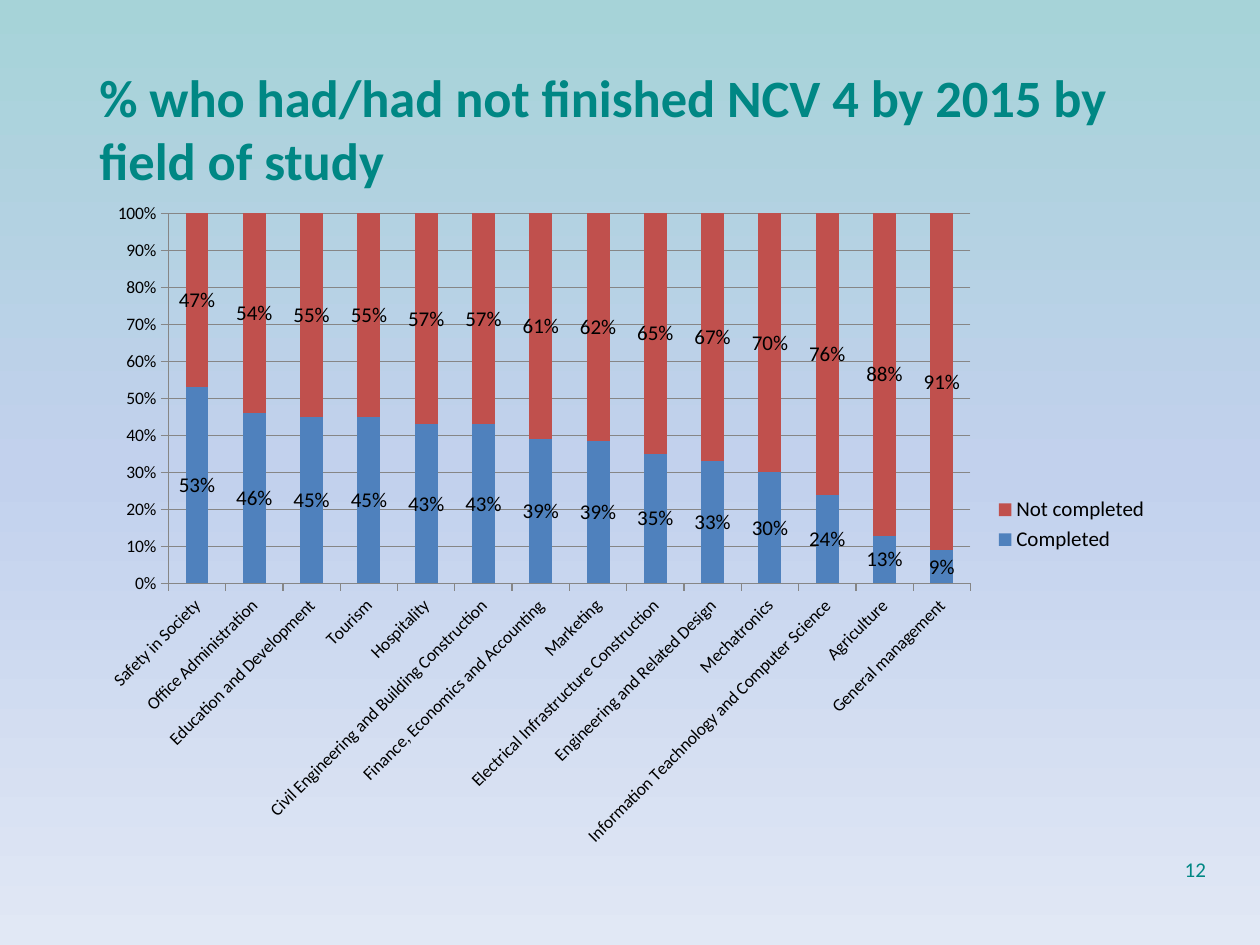
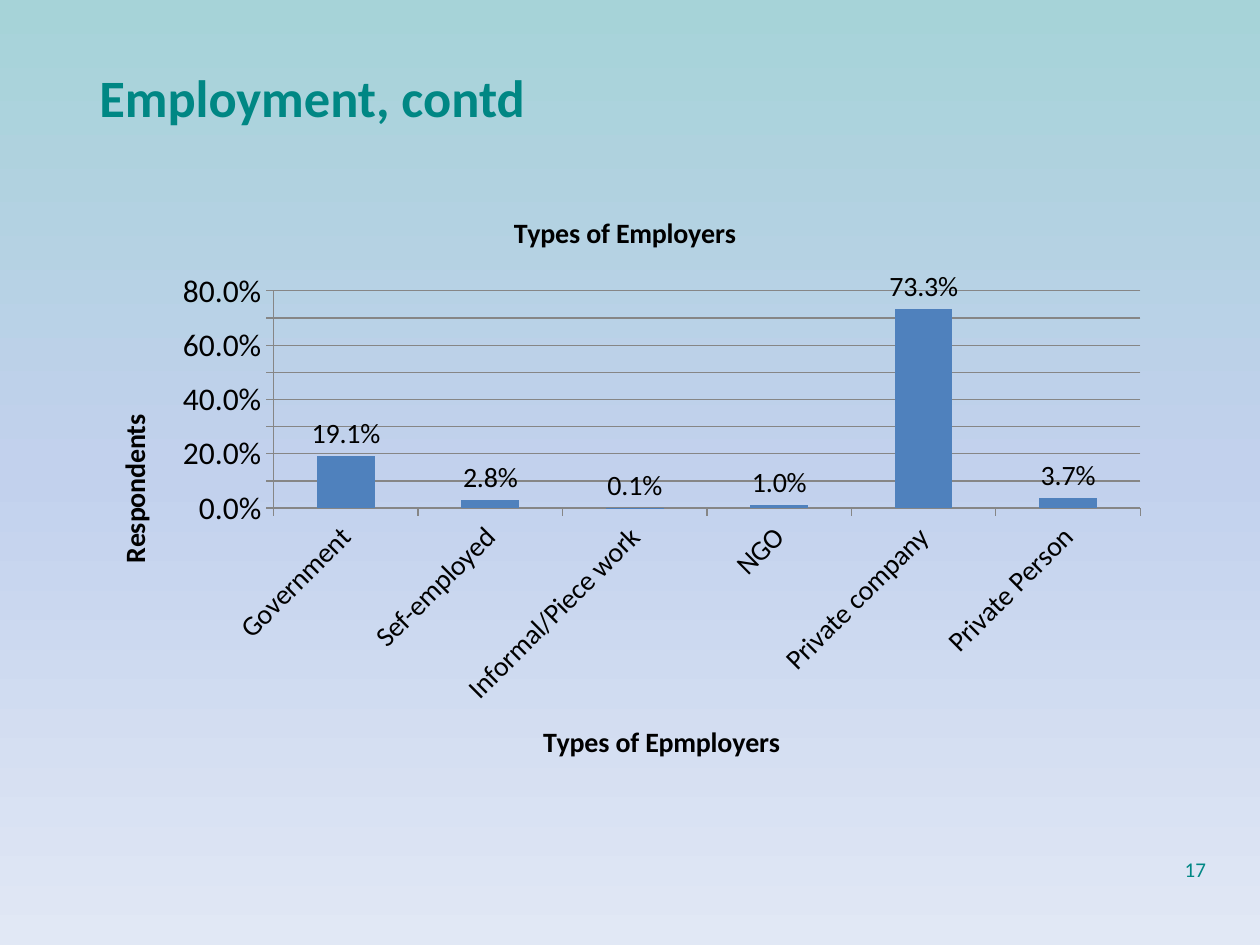
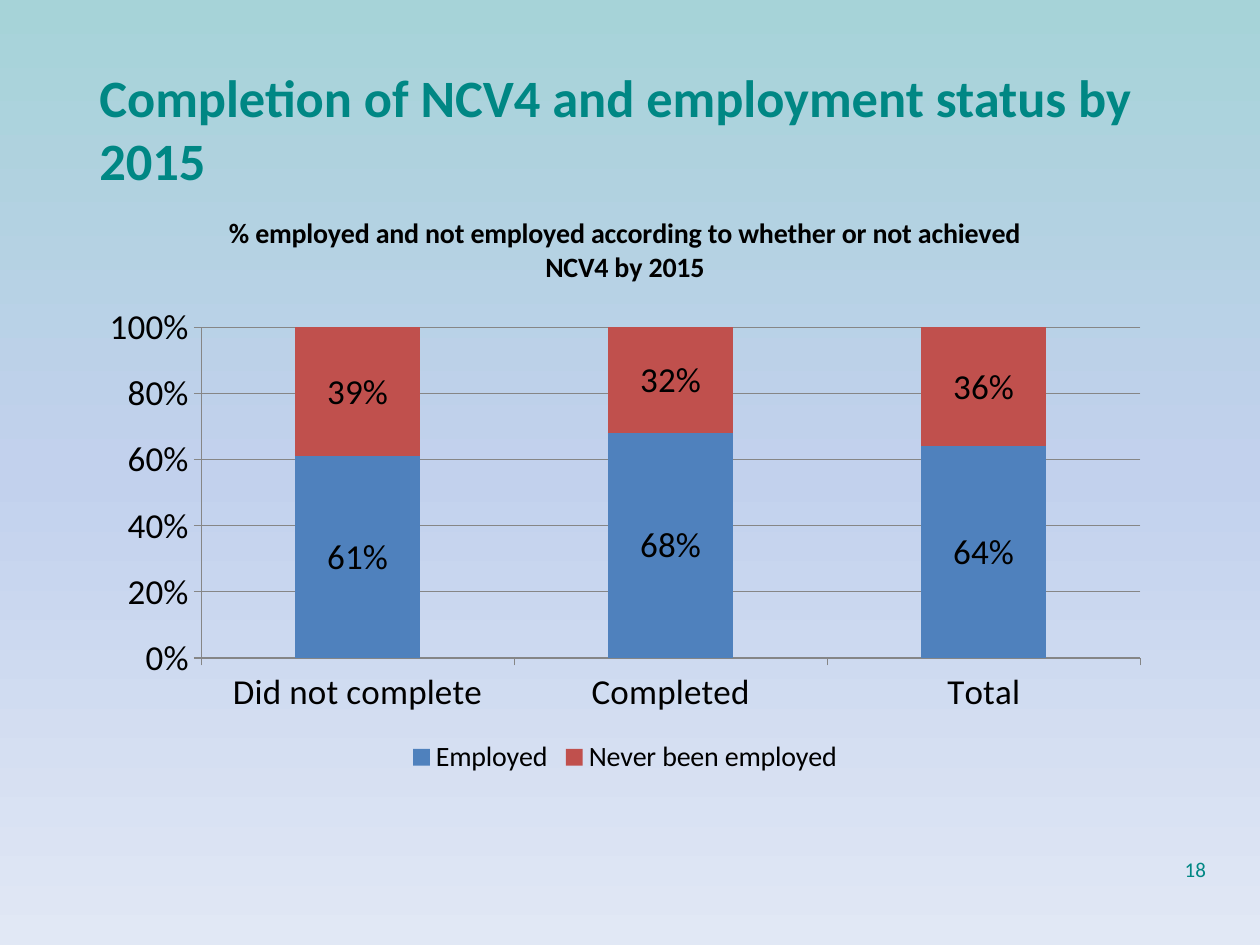
"""Builds three slides of college completion and employment charts."""
from dataclasses import dataclass

from lxml.etree import SubElement
from pptx import Presentation
from pptx.chart.axis import _BaseAxis as Axis
from pptx.chart.chart import Chart
from pptx.chart.data import CategoryChartData
from pptx.dml.color import RGBColor
from pptx.enum.chart import XL_CHART_TYPE as ChartKind
from pptx.enum.chart import XL_LABEL_POSITION as LabelSpot
from pptx.enum.chart import XL_LEGEND_POSITION as LegendSpot
from pptx.enum.chart import XL_TICK_MARK as Tick
from pptx.enum.text import MSO_ANCHOR as Anchor
from pptx.enum.text import MSO_AUTO_SIZE as AutoSize
from pptx.enum.text import PP_ALIGN as Align
from pptx.oxml.ns import qn
from pptx.slide import Slide
from pptx.text.text import Font
from pptx.util import Inches, Pt

COLORS = {
    "sky_top": "A6D3D8",
    "sky_middle": "C2D1ED",
    "sky_bottom": "E1E8F5",
    "teal": "008784",
    "text": "000000",
    "rule": "868686",
    "first_series": "4F81BD",
    "second_series": "C0504D",
}
SERIES_COLORS = ("first_series", "second_series")
BACKGROUND_STOPS = ((0, "sky_top"), (50, "sky_middle"), (100, "sky_bottom"))
FONT = "Calibri"
COLUMNS, ROWS = 100, 75
WIDTH, HEIGHT = Inches(10), Inches(7.5)


@dataclass(frozen=True)
class Area:
    """A rectangle in grid columns and rows."""
    column: float
    row: float
    columns: float
    rows: float

    def place(self) -> tuple[int, int, int, int]:
        """Return left, top, width and height as slide lengths."""
        return (round(self.column * WIDTH / COLUMNS), round(self.row * HEIGHT / ROWS),
                round(self.columns * WIDTH / COLUMNS), round(self.rows * HEIGHT / ROWS))


@dataclass(frozen=True)
class ChartSlide:
    """The content and chart settings of one slide."""
    heading: str
    heading_rows: float
    number: int
    chart_rows: float
    kind: ChartKind
    categories: tuple[str, ...]
    series: dict[str, tuple[float, ...]]
    category_size: int
    value_size: int
    label_size: int
    major_unit: float
    number_format: str = "0%"
    label_spot: LabelSpot = LabelSpot.CENTER
    label_turn: int = 0
    chart_title: str = ""
    category_title: str = ""
    value_title: str = ""
    legend: LegendSpot | None = None
    legend_size: int = 12


SLIDES = (
    ChartSlide(
        heading="% who had/had not finished NCV 4 by 2015 by field of study",
        heading_rows=11.1, number=12, chart_rows=53.1,
        kind=ChartKind.COLUMN_STACKED_100,
        categories=(
            "Safety in Society", "Office Administration", "Education and Development",
            "Tourism", "Hospitality", "Civil Engineering and Building Construction",
            "Finance, Economics and Accounting", "Marketing",
            "Electrical Infrastructure Construction", "Engineering and Related Design",
            "Mechatronics", "Information Teachnology and Computer Science",
            "Agriculture", "General management"),
        series={
            "Completed": (0.53, 0.46, 0.45, 0.45, 0.43, 0.43, 0.39,
                          0.39, 0.35, 0.33, 0.3, 0.24, 0.13, 0.09),
            "Not completed": (0.47, 0.54, 0.55, 0.55, 0.57, 0.57, 0.61,
                              0.62, 0.65, 0.67, 0.7, 0.76, 0.88, 0.91)},
        category_size=10, value_size=10, label_size=12, major_unit=0.1,
        label_turn=-45, legend=LegendSpot.RIGHT),
    ChartSlide(
        heading="Employment, contd",
        heading_rows=6.1, number=17, chart_rows=47.6,
        kind=ChartKind.COLUMN_CLUSTERED,
        categories=("Government", "Sef-employed", "Informal/Piece work", "NGO",
                    "Private company", "Private Person"),
        series={"Series 1": (0.191, 0.028, 0.001, 0.01, 0.733, 0.037)},
        category_size=16, value_size=18, label_size=16, major_unit=0.1,
        number_format="0.0%", label_spot=LabelSpot.OUTSIDE_END, label_turn=-45,
        chart_title="Types of Employers", category_title="Types of Epmployers",
        value_title="Respondents"),
    ChartSlide(
        heading="Completion of NCV4 and employment status by 2015",
        heading_rows=11.1, number=18, chart_rows=46.8,
        kind=ChartKind.COLUMN_STACKED_100,
        categories=("Did not complete", "Completed", "Total"),
        series={"Employed": (0.61, 0.68, 0.64),
                "Never been employed": (0.39, 0.32, 0.36)},
        category_size=20, value_size=20, label_size=20, major_unit=0.2,
        chart_title="% employed and not employed according to whether or not "
                    "achieved NCV4 by 2015",
        legend=LegendSpot.BOTTOM, legend_size=16),
)


def rgb(name: str) -> RGBColor:
    """Return a palette colour."""
    return RGBColor.from_string(COLORS[name])


def style_font(font: Font, size: int, color: str = "text", bold: bool = False) -> None:
    """Set the typeface, size, colour and weight of a font."""
    font.name, font.size, font.bold = FONT, Pt(size), bold
    font.color.rgb = rgb(color)


def paint_background(deck: Presentation) -> None:
    """Give the slide master its vertical gradient."""
    master = deck.slide_master
    fill = master.background.fill
    fill.gradient()
    fill.gradient_angle = 270
    stops = master.element.find(".//" + qn("a:gsLst"))
    stops.clear()
    for percent, color in BACKGROUND_STOPS:
        stop = SubElement(stops, qn("a:gs"), pos=str(percent * 1000))
        SubElement(stop, qn("a:srgbClr"), val=COLORS[color])


def add_text(slide: Slide, area: Area, text: str, size: int, bold: bool = False,
             align: Align = Align.LEFT, anchor: Anchor = Anchor.TOP) -> None:
    """Add one teal paragraph."""
    frame = slide.shapes.add_textbox(*area.place()).text_frame
    frame.word_wrap = True
    frame.auto_size = AutoSize.SHAPE_TO_FIT_TEXT
    frame.vertical_anchor = anchor
    paragraph = frame.paragraphs[0]
    paragraph.text, paragraph.alignment = text, align
    style_font(paragraph.font, size, "teal", bold)


def style_axis(axis: Axis, size: int, title: str) -> None:
    """Style an axis line, its tick labels and its optional title."""
    axis.major_tick_mark, axis.minor_tick_mark = Tick.OUTSIDE, Tick.NONE
    axis.format.line.color.rgb = rgb("rule")
    axis.format.line.width = Pt(0.75)
    style_font(axis.tick_labels.font, size)
    axis.has_title = bool(title)
    if title:
        caption = axis.axis_title.text_frame
        caption.text = title
        style_font(caption.paragraphs[0].font, 16, bold=True)


def style_axes(chart: Chart, content: ChartSlide) -> None:
    """Style both axes and the gridlines."""
    style_axis(chart.category_axis, content.category_size, content.category_title)
    if content.label_turn:
        body = chart.category_axis._element.find(qn("c:txPr")).find(qn("a:bodyPr"))
        body.set("rot", str(content.label_turn * 60000))
        body.set("vert", "horz")
    values = chart.value_axis
    style_axis(values, content.value_size, content.value_title)
    values.major_unit = content.major_unit
    values.tick_labels.number_format = content.number_format
    values.tick_labels.number_format_is_linked = False
    values.has_major_gridlines = True
    values.major_gridlines.format.line.color.rgb = rgb("rule")
    values.major_gridlines.format.line.width = Pt(0.75)


def style_columns(chart: Chart, content: ChartSlide) -> None:
    """Colour the columns and show their values."""
    plot = chart.plots[0]
    plot.gap_width, plot.vary_by_categories = 150, False
    if content.kind == ChartKind.COLUMN_STACKED_100:
        plot.overlap = 100
    for series, color in zip(plot.series, SERIES_COLORS):
        series.format.fill.solid()
        series.format.fill.fore_color.rgb = rgb(color)
        labels = series.data_labels
        labels.show_value = True
        labels.number_format = content.number_format
        labels.number_format_is_linked = False
        labels.position = content.label_spot
        style_font(labels.font, content.label_size)


def add_columns(slide: Slide, content: ChartSlide) -> None:
    """Add the column chart of a slide."""
    data = CategoryChartData(number_format=content.number_format)
    data.categories = content.categories
    for name, values in content.series.items():
        data.add_series(name, values)
    area = Area(7, 15.1, 85.2, content.chart_rows)
    chart = slide.shapes.add_chart(content.kind, *area.place(), data).chart
    style_font(chart.font, 10)
    chart.has_title = bool(content.chart_title)
    if content.chart_title:
        caption = chart.chart_title.text_frame
        caption.text = content.chart_title
        style_font(caption.paragraphs[0].font, 16, bold=True)
    chart.has_legend = content.legend is not None
    if content.legend is not None:
        chart.legend.position = content.legend
        chart.legend.include_in_layout = False
        style_font(chart.legend.font, content.legend_size)
    style_axes(chart, content)
    style_columns(chart, content)


def main() -> None:
    """Build and save the deck."""
    deck = Presentation()
    deck.slide_width, deck.slide_height = WIDTH, HEIGHT
    paint_background(deck)
    for content in SLIDES:
        slide = deck.slides.add_slide(deck.slide_layouts[6])
        add_text(slide, Area(6.9, 4.7, 90, content.heading_rows), content.heading, 30, bold=True)
        add_text(slide, Area(73.4, 67.5, 23.3, 3), str(content.number), 12,
                 align=Align.RIGHT, anchor=Anchor.MIDDLE)
        add_columns(slide, content)
    deck.save("out.pptx")


if __name__ == "__main__":
    main()
